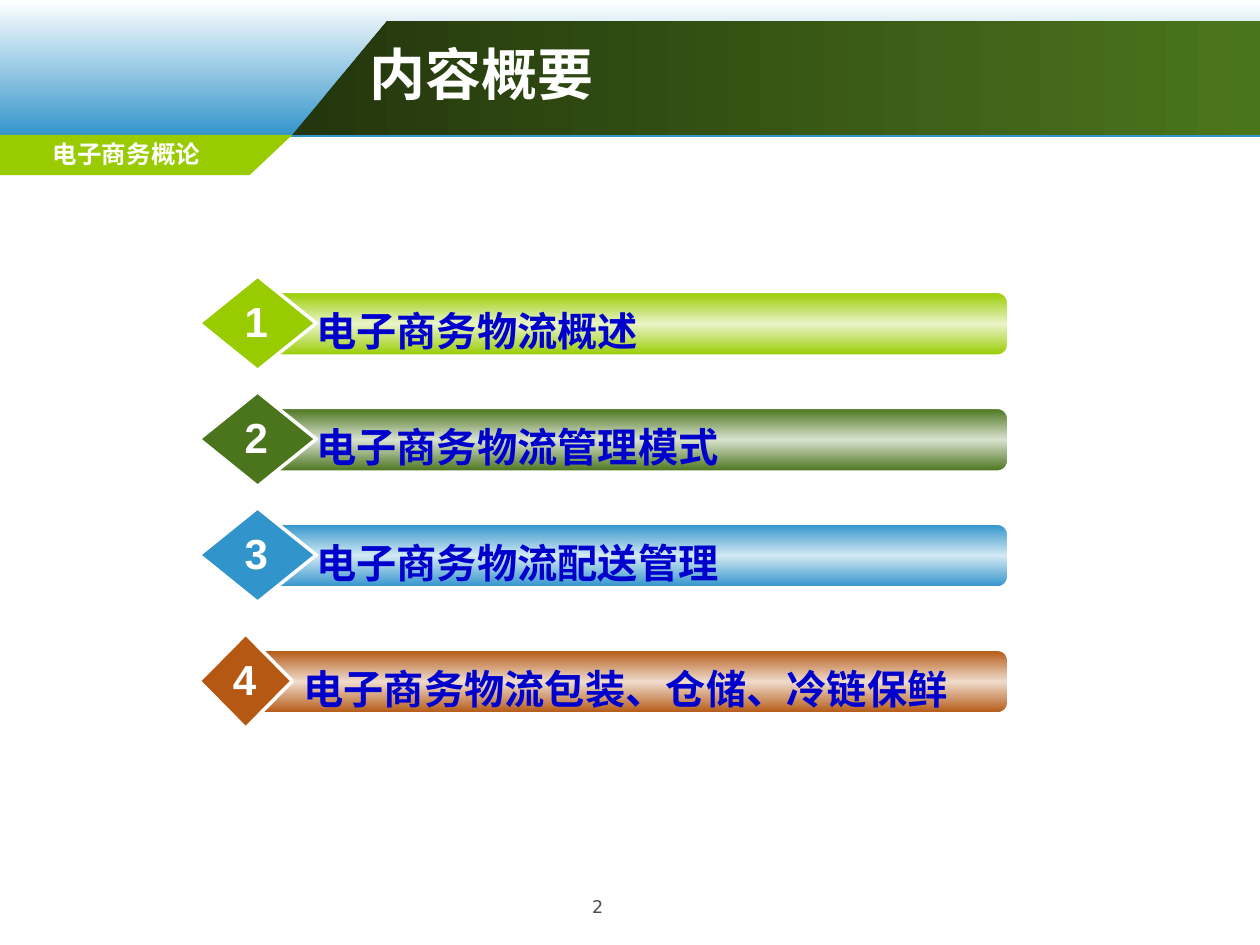
from copy import deepcopy

from pptx import Presentation
from pptx.dml.color import RGBColor
from pptx.enum.shapes import MSO_SHAPE
from pptx.enum.text import MSO_ANCHOR, MSO_AUTO_SIZE, PP_ALIGN
from pptx.oxml.ns import qn
from pptx.util import Inches, Pt

WHITE = RGBColor(0xFF, 0xFF, 0xFF)
LIME = RGBColor(0x99, 0xCC, 0x00)
GREEN = RGBColor(0x4B, 0x75, 0x1D)
DARK = RGBColor(0x23, 0x36, 0x0D)
SKY = RGBColor(0x31, 0x94, 0xCB)
RUST = RGBColor(0xB5, 0x58, 0x13)
NAVY = RGBColor(0x00, 0x00, 0xCC)
GREY = RGBColor(0x4D, 0x4D, 0x4D)
PALE_LIME = RGBColor(0xE9, 0xF4, 0xC9)
PALE_GREEN = RGBColor(0xD9, 0xE2, 0xCF)
PALE_SKY = RGBColor(0xD3, 0xE8, 0xF4)
PALE_RUST = RGBColor(0xEF, 0xDC, 0xCD)

TOPICS = [
    (2.19, 0.93, 2.1, 2.41, LIME, PALE_LIME, "电子商务物流概述"),
    (3.11, 0.93, 2.1, 2.41, GREEN, PALE_GREEN, "电子商务物流管理模式"),
    (4.03, 0.93, 2.1, 2.41, SKY, PALE_SKY, "电子商务物流配送管理"),
    (5.03, 0.74, 1.99, 2.31, RUST, PALE_RUST, "电子商务物流包装、仓储、冷链保鲜"),
]


def blend(shape, colors, angle):
    """Fill a shape with evenly spaced gradient colours."""
    fill = shape.fill
    fill.gradient()
    fill.gradient_angle = angle
    first = shape._element.spPr.find(qn("a:gradFill")).find(qn("a:gsLst"))[0]
    for _ in colors[2:]:
        first.addnext(deepcopy(first))
    for i, (stop, color) in enumerate(zip(fill.gradient_stops, colors)):
        stop.color.rgb = color
        stop.position = i / (len(colors) - 1)


def paint(shape, colors, angle=0, edge=None):
    """Set fill and outline of a shape, without shadow."""
    shape.shadow.inherit = False
    if len(colors) > 1:
        blend(shape, colors, angle)
    else:
        shape.fill.solid()
        shape.fill.fore_color.rgb = colors[0]
    if edge:
        shape.line.color.rgb = WHITE
        shape.line.width = Pt(edge)
    else:
        shape.line.fill.background()


def add_box(shapes, kind, box, colors, angle=0, edge=None):
    """Add a painted preset shape."""
    shape = shapes.add_shape(kind, *map(Inches, box))
    paint(shape, colors, angle, edge)


def add_poly(shapes, points, colors):
    """Add a painted closed outline."""
    spots = [(Inches(x), Inches(y)) for x, y in points]
    pen = shapes.build_freeform(*spots[0])
    pen.add_line_segments(spots[1:], close=True)
    paint(pen.convert_to_shape(), colors)


def write(shape, text, size, color, font="Arial", bold=True, align=PP_ALIGN.LEFT):
    """Put one formatted line of text into a shape."""
    shape.text_frame.text = text
    line = shape.text_frame.paragraphs[0]
    line.alignment = align
    face = line.runs[0].font
    face.name, face.size, face.bold = font, Pt(size), bold
    face.color.rgb = color


def add_text(shapes, box, text, size, color, wrap=True, **style):
    """Add a text box with one line."""
    shape = shapes.add_textbox(*map(Inches, box))
    shape.text_frame.word_wrap = wrap
    write(shape, text, size, color, **style)


def add_head(slide):
    """Draw the header band, the course tag and the title."""
    shapes = slide.shapes
    add_box(shapes, MSO_SHAPE.RECTANGLE, (0, 0, 10, 1.09), [WHITE, SKY], 270)
    add_poly(shapes, [(2.32, 1.07), (10, 1.07), (10, 0.17), (3.07, 0.17)], [DARK, GREEN])
    add_poly(shapes, [(0, 1.07), (2.32, 1.07), (1.98, 1.39), (0, 1.39)], [LIME])
    add_text(shapes, (0.04, 1.05, 1.93, 0.31), "电子商务概论", 14, WHITE,
             font="DejaVu Sans", align=PP_ALIGN.CENTER)
    title = shapes.title
    title.left, title.top, title.width, title.height = map(Inches, (2.83, 0.25, 6.89, 0.66))
    title.text_frame.auto_size = MSO_AUTO_SIZE.NONE
    title.text_frame.vertical_anchor = MSO_ANCHOR.MIDDLE
    write(title, "内容概要", 32, WHITE)
    shapes._spTree.append(title._element)


def add_topic(slide, num, top, width, left, start, color, pale, text):
    """Add one numbered bar as a group."""
    shapes = slide.shapes.add_group_shape().shapes
    add_box(shapes, MSO_SHAPE.ROUNDED_RECTANGLE, (left, top + 0.13, 8 - left, 0.5),
            [color, pale, color], 270, 1)
    add_box(shapes, MSO_SHAPE.DIAMOND, (1.58, top, width, 0.75), [color], edge=2)
    add_text(shapes, (start, top + 0.19, 5.52, 0.51), text, 23, NAVY)
    mid = 1.57 + width / 2
    add_text(shapes, (mid - 0.24, top + 0.11, 0.48, 0.5), str(num), 24, WHITE,
             wrap=False, align=PP_ALIGN.CENTER)


def main():
    """Build and save the slide."""
    deck = Presentation()
    deck.slide_width, deck.slide_height = Inches(10), Inches(7.5)
    slide = deck.slides.add_slide(deck.slide_layouts[5])
    add_head(slide)
    for num, topic in enumerate(TOPICS, 1):
        add_topic(slide, num, *topic)
    add_text(slide.shapes, (3.58, 7.06, 2.33, 0.33), "2", 10, GREY,
             font="DejaVu Sans", bold=False, align=PP_ALIGN.CENTER)
    deck.save("out.pptx")


if __name__ == "__main__":
    main()
